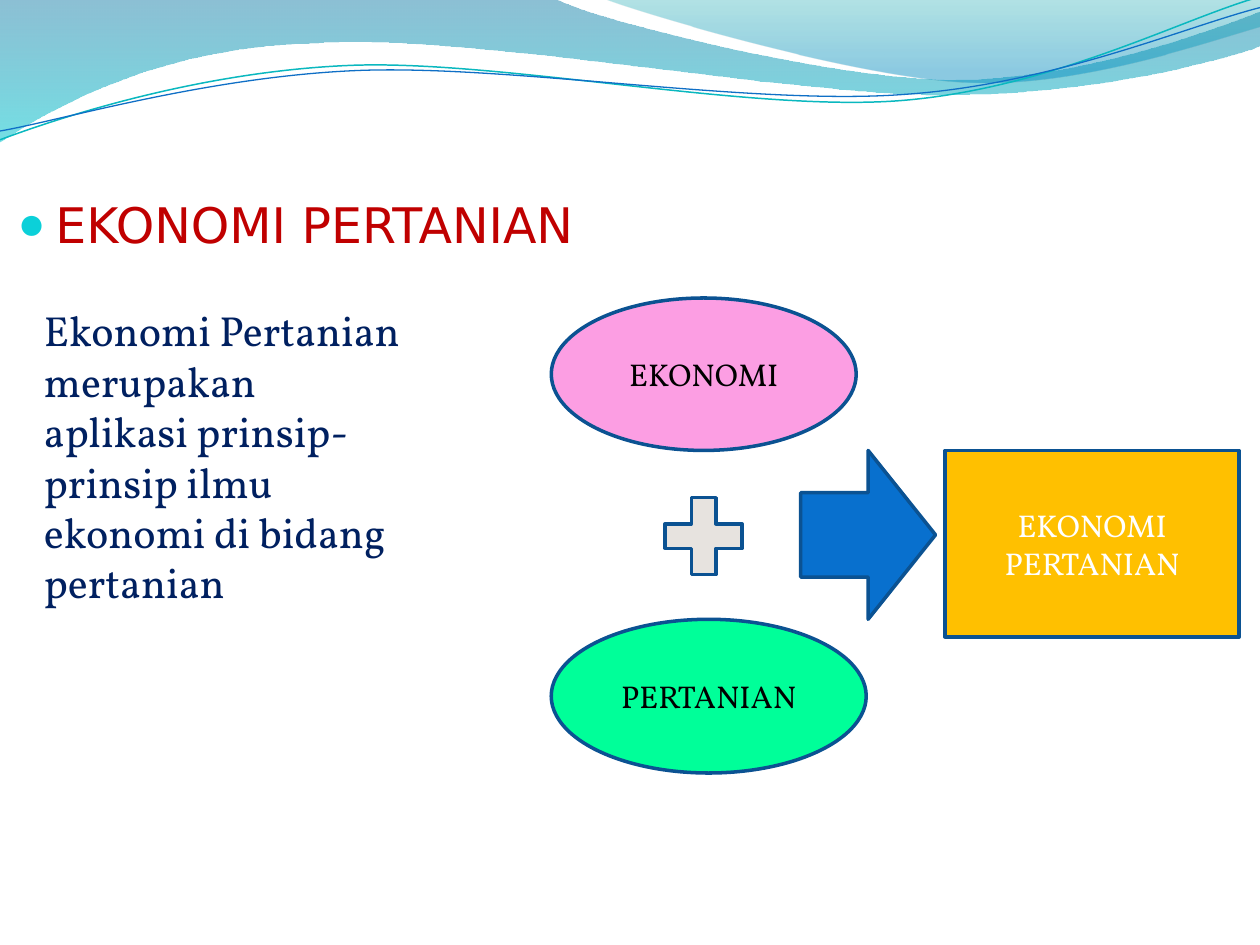
from dataclasses import dataclass
from math import cos, radians, sin
from typing import Optional

from lxml.etree import SubElement
from pptx import Presentation
from pptx.dml.color import RGBColor
from pptx.enum.shapes import MSO_SHAPE as Preset
from pptx.enum.text import MSO_ANCHOR as Anchor, MSO_AUTO_SIZE as AutoSize, PP_ALIGN as Align
from pptx.oxml.ns import qn
from pptx.util import Emu, Inches, Pt

# Grid: 100 columns by 75 rows of square cells
WIDTH, HEIGHT = Inches(10), Inches(7.5)
CELL = WIDTH // 100

BODY_FONT, HEADING_FONT = "Vollkorn", "DejaVu Sans"

BLACK = RGBColor(0x00, 0x00, 0x00)
WHITE = RGBColor(0xFF, 0xFF, 0xFF)
NAVY = RGBColor(0x00, 0x20, 0x60)
RED = RGBColor(0xC0, 0x00, 0x00)
OUTLINE = RGBColor(0x0B, 0x52, 0x92)
PINK = RGBColor(0xFC, 0x9E, 0xE3)
GREEN = RGBColor(0x00, 0xFF, 0x99)
GREY = RGBColor(0xE7, 0xE3, 0xDF)
BLUE = RGBColor(0x08, 0x70, 0xCE)
GOLD = RGBColor(0xFF, 0xC0, 0x00)
BULLET = RGBColor(0x0B, 0xD0, 0xD9)
BAND_TOP = RGBColor(0x00, 0x74, 0xA1)
BAND_BOTTOM = RGBColor(0x00, 0xC6, 0xCF)
SWEEP_TOP = RGBColor(0x00, 0xA1, 0xA9)
SWEEP_BOTTOM = RGBColor(0x00, 0x8B, 0xBF)
TEAL_LINE = RGBColor(0x0A, 0xB8, 0xBF)
BLUE_LINE = RGBColor(0x0F, 0x6F, 0xC6)

Point = tuple[float, float]
Area = tuple[float, float, float, float]  # column, row, columns, rows


@dataclass(frozen=True)
class Stop:
    position: float
    color: RGBColor
    opacity: int  # percent


@dataclass(frozen=True)
class Wave:
    """An outline in cells: two numbers make a straight step, six a Bezier curve."""
    area: Area
    start: Point
    steps: tuple[tuple[float, ...], ...]
    stops: tuple[Stop, ...] = ()
    color: Optional[RGBColor] = None
    weight: float = 0
    tilt: float = 0


@dataclass(frozen=True)
class Figure:
    preset: Preset
    area: Area
    fill: RGBColor
    label: str = ""
    text_color: RGBColor = BLACK


WAVES = (
    Wave((-0.1, -0.1, 100.2, 11.4), (0, 0),
         ((44, -0.1), (47.6, 1.7, 66.4, 6.3, 75.8, 6.3), (85.3, 6.3, 95.8, 2.6, 100, 0.9),
          (100.1, 3.6), (98.3, 4.4, 87, 7.6, 74.6, 7.5), (62.2, 7.5, 38.2, 2.8, 25.7, 3.4),
          (12.9, 3.6, 4.6, 8.3, -0.1, 11.3)),
         stops=(Stop(0, BAND_TOP, 45), Stop(1, BAND_BOTTOM, 55))),
    Wave((47.9, -0.1, 52.1, 7), (47.9, -0.1),
         ((50.9, 1.1, 68.2, 6.2, 76.9, 6.5), (85.6, 6.9, 96.1, 3.2, 100, 2.1), (100, 0)),
         stops=(Stop(0, SWEEP_TOP, 30), Stop(0.8, SWEEP_BOTTOM, 45))),
    Wave((-0.2, 2.2, 100.2, 7.1), (0, 11.1),
         ((4.8, 9.3, 15.8, 5.7, 27.7, 5.2), (39.5, 4.7, 59.3, 8.9, 71.3, 8),
          (83.3, 7.1, 93.8, 1.5, 99.8, -0.2)),
         color=TEAL_LINE, weight=0.85, tilt=-2.7),
    Wave((-0.2, 3, 100.3, 5.8), (0, 10.4),
         ((4.7, 9.6, 16.4, 6.1, 28.3, 5.6), (40.3, 5.1, 59.7, 8.4, 71.7, 7.5),
          (83.6, 6.7, 94.1, 2.1, 100, 0.6)),
         color=BLUE_LINE, weight=0.75, tilt=-2.7),
)

FIGURES = (
    Figure(Preset.OVAL, (43.75, 23.65, 24.2, 12.1), PINK, "EKONOMI"),
    Figure(Preset.OVAL, (43.75, 49.15, 25, 12.2), GREEN, "PERTANIAN"),
    Figure(Preset.MATH_PLUS, (51.7, 38.4, 8.3, 8.3), GREY),
    Figure(Preset.RIGHT_ARROW, (63.55, 35.75, 10.7, 13.4), BLUE),
    Figure(Preset.RECTANGLE, (75, 35.75, 23.35, 14.8), GOLD, "EKONOMI PERTANIAN", WHITE),
)


def cells(*counts: float) -> list[Emu]:
    return [Emu(round(count * CELL)) for count in counts]


def local_point(wave: Wave, x: float, y: float) -> list[Emu]:
    """Place a page point inside the wave's frame, before the frame is tilted."""
    left, top, columns, rows = wave.area
    dx, dy = x - left - columns / 2, y - top - rows / 2
    turn = radians(-wave.tilt)
    return cells(columns / 2 + dx * cos(turn) - dy * sin(turn),
                 rows / 2 + dx * sin(turn) + dy * cos(turn))


def bend(shape, wave: Wave) -> None:
    """Fit the outline to the wave's frame and turn six-number steps into curves."""
    shape.left, shape.top, shape.width, shape.height = cells(*wave.area)
    outline = next(shape.element.iter(qn("a:path")))
    outline.set("w", str(shape.width))
    outline.set("h", str(shape.height))
    for command, step in zip(list(outline), (wave.start, *wave.steps)):
        if len(step) == 6:
            command.tag = qn("a:cubicBezTo")
        for point in list(command):
            command.remove(point)
        for x, y in zip(step[::2], step[1::2]):
            column, row = local_point(wave, x, y)
            SubElement(command, qn("a:pt"), x=str(column), y=str(row))
    shape.rotation = wave.tilt


def draw_wave(page, wave: Wave) -> None:
    builder = page.shapes.build_freeform(*cells(*wave.start))
    builder.add_line_segments([cells(*step[-2:]) for step in wave.steps],
                              close=bool(wave.stops))
    shape = builder.convert_to_shape()
    bend(shape, wave)
    shape.shadow.inherit = False
    if not wave.stops:
        shape.fill.background()
        shape.line.color.rgb = wave.color
        shape.line.width = Pt(wave.weight)
        return
    shape.line.fill.background()
    shape.fill.gradient()
    shape.fill.gradient_angle = 270
    for target, stop in zip(shape.fill.gradient_stops, wave.stops):
        target.position = stop.position
        target.color.rgb = stop.color
    for color, stop in zip(shape.element.iter(qn("a:srgbClr")), wave.stops):
        SubElement(color, qn("a:alpha"), val=str(stop.opacity * 1000))


def format_text(para, font: str, size: float, color: RGBColor) -> None:
    for span in para.runs:
        span.font.name = font
        span.font.size = Pt(size)
        span.font.color.rgb = color


def draw_figure(page, figure: Figure) -> None:
    shape = page.shapes.add_shape(figure.preset, *cells(*figure.area))
    shape.shadow.inherit = False
    shape.fill.solid()
    shape.fill.fore_color.rgb = figure.fill
    shape.line.color.rgb = OUTLINE
    shape.line.width = Pt(2)
    if figure.label:
        frame = shape.text_frame
        frame.text = figure.label
        frame.vertical_anchor = Anchor.MIDDLE
        para = frame.paragraphs[0]
        para.alignment = Align.CENTER
        format_text(para, BODY_FONT, 18, figure.text_color)


def write_heading(body) -> None:
    body.left, body.top, body.width, body.height = cells(0.4, 14.9, 96.7, 53.2)
    body.text_frame.text = "EKONOMI PERTANIAN"
    para = body.text_frame.paragraphs[0]
    format_text(para, HEADING_FONT, 28, RED)
    # Hanging round bullet
    props = para._p.get_or_add_pPr()
    props.set("marL", str(Inches(0.3)))
    props.set("indent", str(-Inches(0.3)))
    SubElement(SubElement(props, qn("a:buClr")), qn("a:srgbClr"), val=str(BULLET))
    SubElement(props, qn("a:buSzPct"), val="95000")
    SubElement(props, qn("a:buChar"), char="●")


def write_definition(page) -> None:
    box = page.shapes.add_textbox(*cells(2.5, 23.7, 30.8, 21.2))
    frame = box.text_frame
    frame.word_wrap = True
    frame.auto_size = AutoSize.SHAPE_TO_FIT_TEXT
    frame.text = ("Ekonomi Pertanian merupakan aplikasi prinsip-prinsip "
                  "ilmu ekonomi di bidang pertanian")
    format_text(frame.paragraphs[0], BODY_FONT, 24, NAVY)


def main() -> None:
    deck = Presentation()
    deck.slide_width, deck.slide_height = WIDTH, HEIGHT
    page = deck.slides.add_slide(deck.slide_layouts[1])

    # The heading is a bulleted line, so the title placeholder goes
    title = page.shapes.title.element
    title.getparent().remove(title)

    for wave in WAVES:
        draw_wave(page, wave)
    write_heading(page.placeholders[1])
    for figure in FIGURES:
        draw_figure(page, figure)
    write_definition(page)
    deck.save("out.pptx")


if __name__ == "__main__":
    main()
